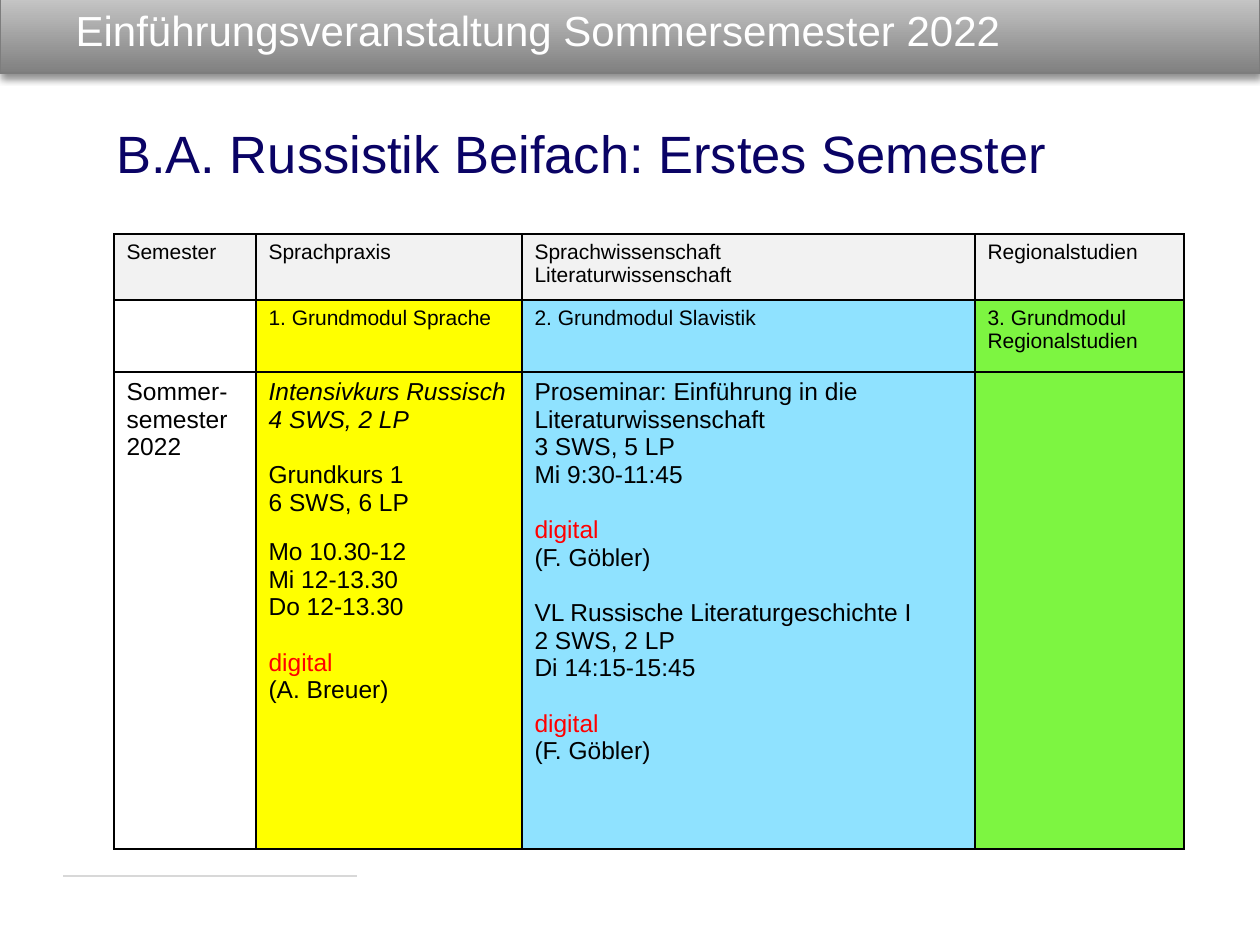
"""Build the first-semester course overview slide."""
from typing import NamedTuple

from lxml import etree
from pptx import Presentation
from pptx import util as u
from pptx.dml import color
from pptx.enum import shapes, text
from pptx.oxml import ns

SCALE = 914400 / 126
FONT = "Arial"
COLORS = {
    "black": "000000", "white": "FFFFFF", "red": "FF0000", "navy": "0A0365",
    "bar_dark": "808080", "bar_light": "CDCDCD", "bar_edge": "7D7D7D",
    "rule": "D8D8D8", "header": "F2F2F2", "yellow": "FFFF00",
    "blue": "8FE2FF", "green": "7DF541",
}
COLUMNS = (142, 266, 453, 209)
ROWS = (66, 72, 477)
GAP = 16
SMALL_GAP = 12.5


class Line(NamedTuple):
    words: str
    color: str = "black"
    before: float = 0
    italic: bool = False


class Cell(NamedTuple):
    fill: str | None = None
    lines: tuple[Line, ...] = ()
    size: int = 12


DIGITAL = Line("digital", "red", GAP)
GOEBLER = Line("(F. Göbler)")
PLAN = (
    (
        Cell("header", (Line("Semester"),)),
        Cell("header", (Line("Sprachpraxis"),)),
        Cell("header", (Line("Sprachwissenschaft"), Line("Literaturwissenschaft"))),
        Cell("header", (Line("Regionalstudien"),)),
    ),
    (
        Cell(),
        Cell("yellow", (Line("1. Grundmodul Sprache"),)),
        Cell("blue", (Line("2. Grundmodul Slavistik"),)),
        Cell("green", (Line("3. Grundmodul Regionalstudien"),)),
    ),
    (
        Cell(None, (Line("Sommer-semester 2022"),), 14),
        Cell("yellow", (
            Line("Intensivkurs Russisch", italic=True),
            Line("4 SWS, 2 LP", italic=True),
            Line("Grundkurs 1", before=GAP),
            Line("6 SWS, 6 LP"),
            Line("Mo 10.30-12", before=SMALL_GAP),
            Line("Mi 12-13.30"),
            Line("Do 12-13.30"),
            DIGITAL,
            Line("(A. Breuer)"),
        ), 14),
        Cell("blue", (
            Line("Proseminar: Einführung in die Literaturwissenschaft"),
            Line("3 SWS, 5 LP"),
            Line("Mi 9:30-11:45"),
            DIGITAL,
            GOEBLER,
            Line("VL Russische Literaturgeschichte I", before=GAP),
            Line("2 SWS, 2 LP"),
            Line("Di 14:15-15:45"),
            DIGITAL,
            GOEBLER,
        ), 14),
        Cell("green"),
    ),
)


def px(length: float) -> u.Emu:
    return u.Emu(round(length * SCALE))


def rgb(name: str) -> color.RGBColor:
    return color.RGBColor.from_string(COLORS[name])


def apply(target, formats: dict) -> None:
    for name, value in formats.items():
        setattr(target, name, value)


def add_color(parent, name: str):
    return etree.SubElement(parent, ns.qn("a:srgbClr"), val=COLORS[name])


def write_lines(frame, lines: tuple[Line, ...], size: int) -> None:
    for index, line in enumerate(lines):
        paragraph = frame.paragraphs[0] if index == 0 else frame.add_paragraph()
        paragraph.alignment = text.PP_ALIGN.LEFT
        if line.before:
            paragraph.space_before = u.Pt(line.before)
        run = paragraph.add_run()
        run.text = line.words
        apply(run.font, {"name": FONT, "size": u.Pt(size), "italic": line.italic})
        run.font.color.rgb = rgb(line.color)


def add_banner(slide) -> None:
    banner = slide.shapes.add_shape(
        shapes.MSO_SHAPE.RECTANGLE, px(0), px(-10), px(1260), px(83))
    banner.fill.gradient()
    banner.fill.gradient_angle = 90
    for stop, name in zip(banner.fill.gradient_stops, ("bar_dark", "bar_light")):
        stop.color.rgb = rgb(name)
    banner.line.color.rgb = rgb("bar_edge")
    banner.line.width = u.Pt(0.75)
    banner.shadow.inherit = False
    effects = banner._element.spPr.find(ns.qn("a:effectLst"))
    shadow = etree.SubElement(
        effects, ns.qn("a:outerShdw"), blurRad=str(u.Pt(4)), dist=str(u.Pt(3)),
        dir="5400000", algn="ctr", rotWithShape="0")
    etree.SubElement(add_color(shadow, "black"), ns.qn("a:alpha"), val="43000")
    slide.shapes._spTree.insert(2, banner._element)


def add_rule(slide) -> None:
    rule = slide.shapes.add_connector(
        shapes.MSO_CONNECTOR.STRAIGHT, px(63), px(876), px(357), px(876))
    rule.line.color.rgb = rgb("rule")
    rule.line.width = u.Pt(0.75)
    etree.SubElement(rule._element.spPr, ns.qn("a:effectLst"))


def add_borders(cell) -> None:
    properties = cell._tc.get_or_add_tcPr()
    for index, side in enumerate(("lnL", "lnR", "lnT", "lnB")):
        border = etree.Element(ns.qn(f"a:{side}"), w=str(u.Pt(1)))
        add_color(etree.SubElement(border, ns.qn("a:solidFill")), "black")
        properties.insert(index, border)


def add_plan(slide) -> None:
    table = slide.shapes.add_table(
        len(ROWS), len(COLUMNS), px(114), px(234), px(sum(COLUMNS)), px(sum(ROWS))).table
    apply(table, {"first_row": False, "horz_banding": False})
    for column, width in zip(table.columns, COLUMNS):
        column.width = px(width)
    for row, height, contents in zip(table.rows, ROWS, PLAN):
        row.height = px(height)
        for cell, content in zip(row.cells, contents):
            if content.fill:
                cell.fill.solid()
                cell.fill.fore_color.rgb = rgb(content.fill)
            else:
                cell.fill.background()
            add_borders(cell)
            write_lines(cell.text_frame, content.lines, content.size)


def main() -> None:
    presentation = Presentation()
    apply(presentation, {"slide_width": px(1260), "slide_height": px(945)})
    slide = presentation.slides.add_slide(presentation.slide_layouts[5])

    title = slide.shapes.title
    apply(title, {"left": px(63), "top": px(0), "width": px(1168), "height": px(59)})
    apply(title.text_frame, {"vertical_anchor": text.MSO_ANCHOR.MIDDLE,
                             "auto_size": text.MSO_AUTO_SIZE.NONE, "word_wrap": True})
    write_lines(title.text_frame,
                (Line("Einführungsveranstaltung Sommersemester 2022", "white"),), 24)

    add_banner(slide)
    add_rule(slide)
    add_plan(slide)

    heading = slide.shapes.add_textbox(px(104), px(115), px(1062), px(77))
    heading.text_frame.word_wrap = True
    write_lines(heading.text_frame,
                (Line("B.A. Russistik Beifach: Erstes Semester", "navy"),), 30)
    presentation.save("out.pptx")


if __name__ == "__main__":
    main()
